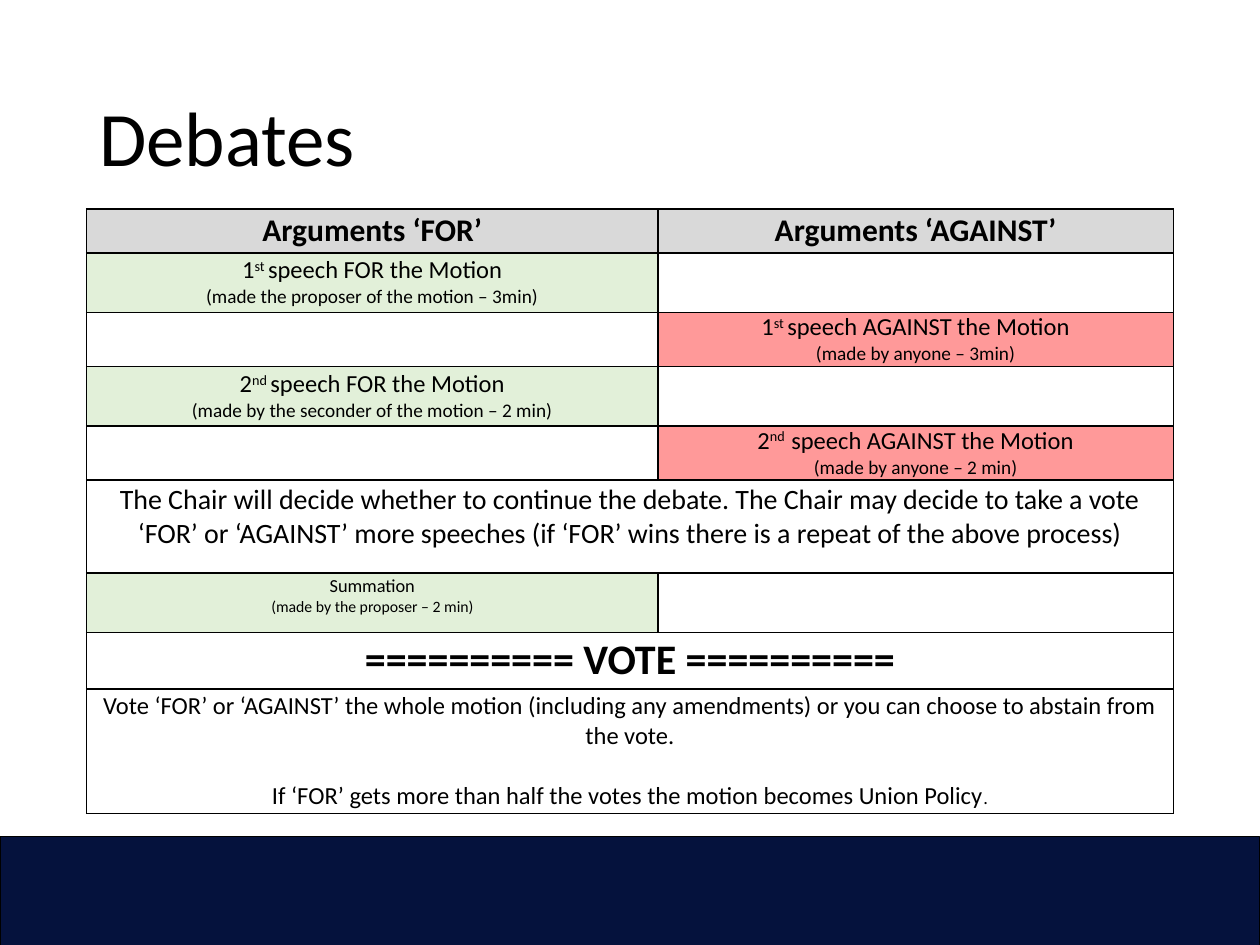
from dataclasses import dataclass

from pptx import Presentation
from pptx.dml.color import RGBColor
from pptx.enum.shapes import MSO_SHAPE as Shape
from pptx.enum.text import MSO_ANCHOR as Anchor, PP_ALIGN as Align
from pptx.oxml import parse_xml
from pptx.oxml.ns import nsdecls
from pptx.util import Pt


@dataclass(frozen=True)
class Theme:
    font: str = "Calibri"
    ink: str = "000000"
    navy: str = "05123D"
    grey: str = "D9D9D9"
    green: str = "E2F0D9"
    red: str = "FF9999"
    title: float = 44
    vote: float = 24
    header: float = 18
    chair: float = 16
    body: float = 14
    note: float = 11
    summation: float = 10.5
    small: float = 9


@dataclass(frozen=True)
class Run:
    text: str
    size: float
    bold: bool = False
    raised: bool = False


@dataclass(frozen=True)
class Entry:
    lines: list
    fill: str = ""
    anchor: Anchor = Anchor.TOP
    margin: float = 1.5
    gap: float = 0
    wide: bool = False


class SlideBuilder:
    """Holds the theme and the current slide, and adds each kind of element."""

    def __init__(self, slide, theme):
        self.slide = slide
        self.theme = theme

    def style(self, run, size, bold=False):
        run.font.name = self.theme.font
        run.font.size = Pt(size)
        run.font.bold = bold
        run.font.color.rgb = RGBColor.from_string(self.theme.ink)

    def title(self, text, left, top, width, height):
        shape = self.slide.shapes.title
        shape.left, shape.top, shape.width, shape.height = map(Pt, (left, top, width, height))
        frame = shape.text_frame
        frame.text = text
        frame.vertical_anchor = Anchor.MIDDLE
        paragraph = frame.paragraphs[0]
        paragraph.alignment = Align.LEFT
        paragraph.line_spacing = 0.9
        self.style(paragraph.runs[0], self.theme.title)

    def banner(self, left, top, width, height):
        shape = self.slide.shapes.add_shape(Shape.RECTANGLE, *map(Pt, (left, top, width, height)))
        shape.shadow.inherit = False
        shape.fill.solid()
        shape.fill.fore_color.rgb = RGBColor.from_string(self.theme.navy)
        shape.line.color.rgb = RGBColor.from_string(self.theme.ink)
        shape.line.width = Pt(0.5)

    def borders(self, cell):
        properties = cell._tc.get_or_add_tcPr()
        for index, side in enumerate(("lnL", "lnR", "lnT", "lnB")):
            properties.insert(index, parse_xml(
                f'<a:{side} {nsdecls("a")} w="{Pt(1)}"><a:solidFill>'
                f'<a:srgbClr val="{self.theme.ink}"/></a:solidFill></a:{side}>'))

    def fill_cell(self, cell, entry):
        cell.vertical_anchor = entry.anchor
        cell.margin_left = cell.margin_right = Pt(2.2)
        cell.margin_top = cell.margin_bottom = Pt(entry.margin)
        if entry.fill:
            cell.fill.solid()
            cell.fill.fore_color.rgb = RGBColor.from_string(entry.fill)
        frame = cell.text_frame
        for index, line in enumerate(entry.lines):
            paragraph = frame.add_paragraph() if index else frame.paragraphs[0]
            paragraph.alignment = Align.CENTER
            if index and entry.gap:
                paragraph.space_before = Pt(entry.gap)
            for part in line:
                run = paragraph.add_run()
                run.text = part.text
                self.style(run, part.size, part.bold)
                if part.raised:
                    run._r.get_or_add_rPr().set("baseline", "30000")

    def table(self, rows, heights, widths, left, top):
        frame = self.slide.shapes.add_table(
            len(rows), len(widths), *map(Pt, (left, top, sum(widths), sum(heights))))
        table = frame.table
        table.first_row = table.horz_banding = False
        for column, width in zip(table.columns, widths):
            column.width = Pt(width)
        for row, height in zip(table.rows, heights):
            row.height = Pt(height)
        for row_index, entries in enumerate(rows):
            for column_index, entry in enumerate(entries):
                cell = table.cell(row_index, column_index)
                cell.fill.background()
                self.borders(cell)
                if entry:
                    self.fill_cell(cell, entry)
            if entries[0] and entries[0].wide:
                table.cell(row_index, 0).merge(table.cell(row_index, 1))


def speech(theme, number, ordinal, text, note, **options):
    heading = [Run(number, theme.body), Run(ordinal, theme.body, raised=True), Run(text, theme.body)]
    return Entry([heading, [Run(note, theme.note)]], **options)


def debate_rows(theme):
    against = {"fill": theme.red, "margin": 0}
    return [
        [Entry([[Run(f"Arguments ‘{side}’", theme.header, True)]], theme.grey)
         for side in ("FOR", "AGAINST")],
        [speech(theme, "1", "st ", "speech FOR the Motion",
                "(made the proposer of the motion – 3min)", fill=theme.green), None],
        [None, speech(theme, "1", "st ", "speech AGAINST the Motion",
                      "(made by anyone – 3min)", anchor=Anchor.MIDDLE, **against)],
        [speech(theme, "2", "nd ", "speech FOR the Motion",
                "(made by the seconder of the motion – 2 min)", fill=theme.green), None],
        [None, speech(theme, "2", "nd  ", "speech AGAINST the Motion",
                      "(made by anyone – 2 min)", **against)],
        [Entry([[Run("The Chair will decide whether to continue the debate. The Chair may decide "
                     "to take a vote ‘FOR’ or ‘AGAINST’ more speeches (if ‘FOR’ wins there is a "
                     "repeat of the above process)", theme.chair)]], wide=True), None],
        [Entry([[Run("Summation", theme.summation)],
                [Run("(made by the proposer – 2 min)", theme.small)]], theme.green), None],
        [Entry([[Run("========== VOTE ==========", theme.vote, True)]],
               anchor=Anchor.MIDDLE, wide=True), None],
        [Entry([[Run("Vote ‘FOR’ or ‘AGAINST’ the whole motion (including any amendments) or you "
                     "can choose to abstain from the vote.", theme.body)],
                [Run("If ‘FOR’ gets more than half the votes the motion becomes Union Policy",
                     theme.body), Run(".", theme.summation)]], gap=17, wide=True), None],
    ]


def main():
    presentation = Presentation()
    presentation.slide_width, presentation.slide_height = Pt(720), Pt(540)
    theme = Theme()
    slide = presentation.slides.add_slide(presentation.slide_layouts[5])
    builder = SlideBuilder(slide, theme)
    builder.banner(0, 478, 720, 62)
    builder.title("Debates", 49.5, 28.75, 621, 104.4)
    builder.table(debate_rows(theme), [19.5, 34, 31, 34, 31, 53, 34, 19.5, 70],
                  [326.5, 294.5], 49.5, 119.5)
    presentation.save("out.pptx")


if __name__ == "__main__":
    main()
